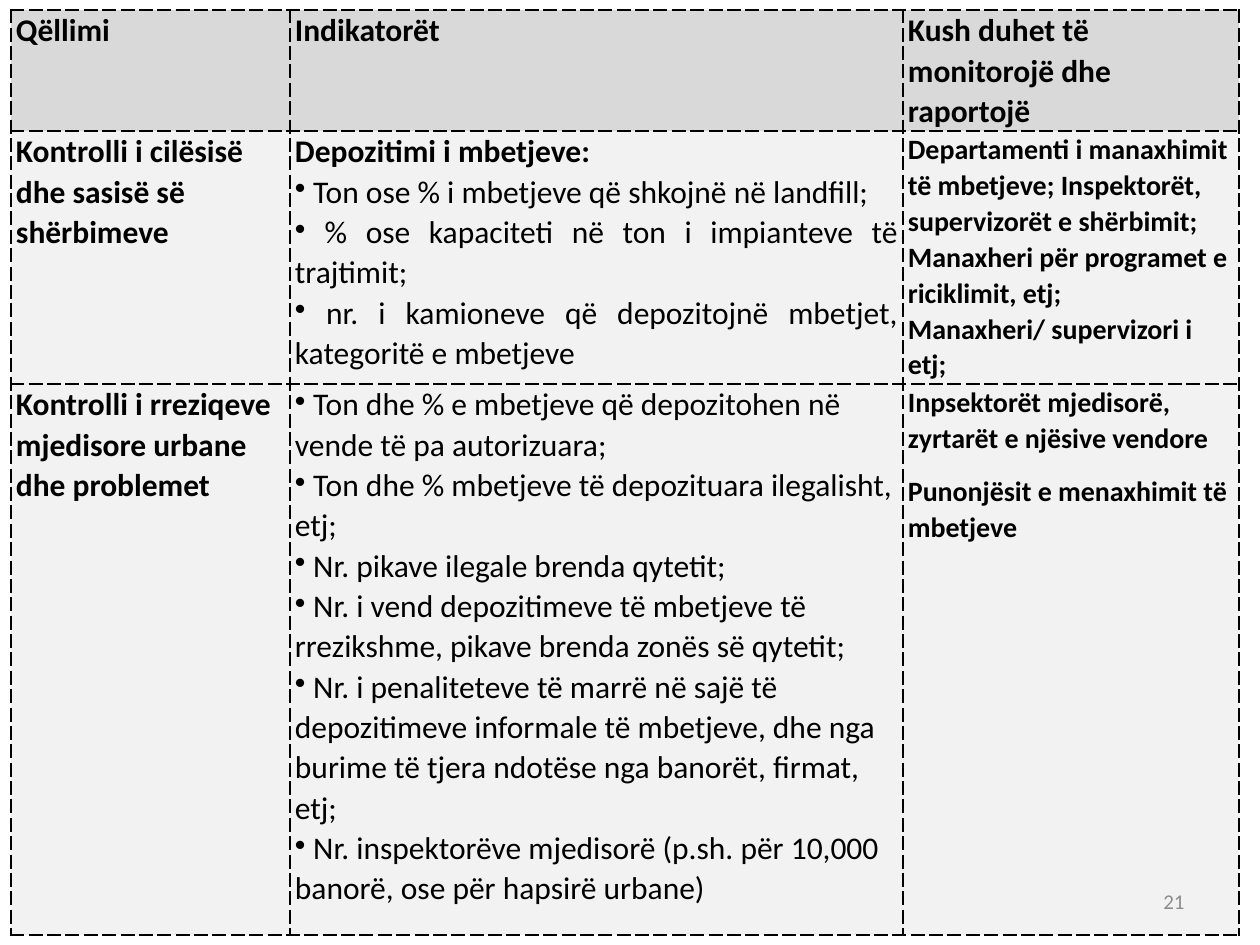
"""Build the waste-monitoring indicators table slide."""
import dataclasses

import lxml.etree
import pptx
import pptx.dml.color
import pptx.enum.text
import pptx.oxml.ns
import pptx.util

PX = 914400 / 126
FONT = "Calibri"
COLORS = {"head": "D9D9D9", "body": "F2F2F2", "ink": "000000", "number": "8C8C8C"}
ALIGN = pptx.enum.text.PP_ALIGN
qn = pptx.oxml.ns.qn


@dataclasses.dataclass
class Line:
    text: str
    size: int = 18
    bold: bool = True
    bullet: bool = False
    align: ALIGN = ALIGN.LEFT
    after: int = 0


def px(length: int) -> int:
    return round(length * PX)


def rgb(name: str) -> pptx.dml.color.RGBColor:
    return pptx.dml.color.RGBColor.from_string(COLORS[name])


def item(text: str, align: ALIGN = ALIGN.LEFT) -> Line:
    return Line(" " + text, bold=False, bullet=True, align=align)


def apply(target: object, values: dict) -> None:
    for name, value in values.items():
        setattr(target, name, value)


def write(frame, lines: list[Line], color: str, spacing: float) -> None:
    for index, line in enumerate(lines):
        para = frame.paragraphs[0] if index == 0 else frame.add_paragraph()
        apply(para, {"alignment": line.align, "line_spacing": spacing,
                     "space_before": pptx.util.Pt(0),
                     "space_after": pptx.util.Pt(line.after)})
        if line.bullet:
            bullet = lxml.etree.SubElement(para._p.get_or_add_pPr(), qn("a:buChar"))
            bullet.set("char", "•")
        span = para.add_run()
        span.text = line.text
        apply(span.font, {"name": FONT, "size": pptx.util.Pt(line.size), "bold": line.bold})
        span.font.color.rgb = rgb(color)


def add_borders(cell) -> None:
    properties = cell._tc.get_or_add_tcPr()
    for index, side in enumerate("LRTB"):
        border = lxml.etree.Element(qn(f"a:ln{side}"), w=str(pptx.util.Pt(1)))
        fill = lxml.etree.SubElement(border, qn("a:solidFill"))
        lxml.etree.SubElement(fill, qn("a:srgbClr"), val=COLORS["ink"])
        lxml.etree.SubElement(border, qn("a:prstDash"), val="dash")
        properties.insert(index, border)


def fill_cell(cell, lines: list[Line], color: str) -> None:
    apply(cell, {"margin_left": px(5), "margin_right": px(5),
                 "margin_top": 0, "margin_bottom": 0})
    cell.fill.solid()
    cell.fill.fore_color.rgb = rgb(color)
    add_borders(cell)
    write(cell.text_frame, lines, "ink", 1.05)


COLUMNS = [279, 613, 336]
ROWS = [121, 253, 551]
CONTENT = [
    [[Line("Qëllimi")], [Line("Indikatorët")],
     [Line("Kush duhet të monitorojë dhe raportojë")]],
    [[Line("Kontrolli i cilësisë dhe sasisë së shërbimeve", after=10)],
     [Line("Depozitimi i mbetjeve:"),
      item("Ton ose % i mbetjeve që shkojnë në landfill;", ALIGN.JUSTIFY),
      item("% ose kapaciteti në ton i impianteve të trajtimit;", ALIGN.JUSTIFY),
      item("nr. i kamioneve që depozitojnë mbetjet, kategoritë e mbetjeve", ALIGN.JUSTIFY)],
     [Line("Departamenti i manaxhimit të mbetjeve; Inspektorët, "
           "supervizorët e shërbimit;", 16),
      Line("Manaxheri për programet e riciklimit, etj;", 16),
      Line("Manaxheri/ supervizori i etj;", 16, after=10)]],
    [[Line("Kontrolli i rreziqeve mjedisore urbane dhe problemet", after=10)],
     [item("Ton dhe % e mbetjeve që depozitohen në vende të pa autorizuara;"),
      item("Ton dhe % mbetjeve të depozituara ilegalisht, etj;"),
      item("Nr. pikave ilegale brenda qytetit;"),
      item("Nr. i vend depozitimeve të mbetjeve të rrezikshme, "
           "pikave brenda zonës së qytetit;"),
      item("Nr. i penaliteteve të marrë në sajë të depozitimeve informale të mbetjeve, "
           "dhe nga burime të tjera ndotëse nga banorët, firmat, etj;"),
      item("Nr. inspektorëve mjedisorë (p.sh. për 10,000 banorë, ose për hapsirë urbane)")],
     [Line("Inpsektorët mjedisorë, zyrtarët e njësive vendore", 16, after=10),
      Line("Punonjësit e menaxhimit të mbetjeve", 16, after=10)]],
]


def add_indicators(page) -> None:
    table = page.shapes.add_table(len(ROWS), len(COLUMNS), px(11), px(10),
                                  px(sum(COLUMNS)), px(sum(ROWS))).table
    apply(table, {"first_row": False, "horz_banding": False})
    for column, width in zip(table.columns, COLUMNS):
        column.width = px(width)
    for row, height in zip(table.rows, ROWS):
        row.height = px(height)
    for row, cells in enumerate(CONTENT):
        for column, lines in enumerate(cells):
            fill_cell(table.cell(row, column), lines, "body" if row else "head")


def add_page_number(page) -> None:
    box = page.shapes.add_textbox(px(903), px(876), px(294), px(50))
    apply(box.text_frame, {"word_wrap": True,
                           "vertical_anchor": pptx.enum.text.MSO_ANCHOR.MIDDLE})
    write(box.text_frame, [Line("21", 12, False, align=ALIGN.RIGHT)], "number", 1.0)


def main() -> None:
    deck = pptx.Presentation()
    apply(deck, {"slide_width": px(1260), "slide_height": px(945)})
    page = deck.slides.add_slide(deck.slide_layouts[6])
    add_indicators(page)
    add_page_number(page)
    deck.save("out.pptx")


if __name__ == "__main__":
    main()
